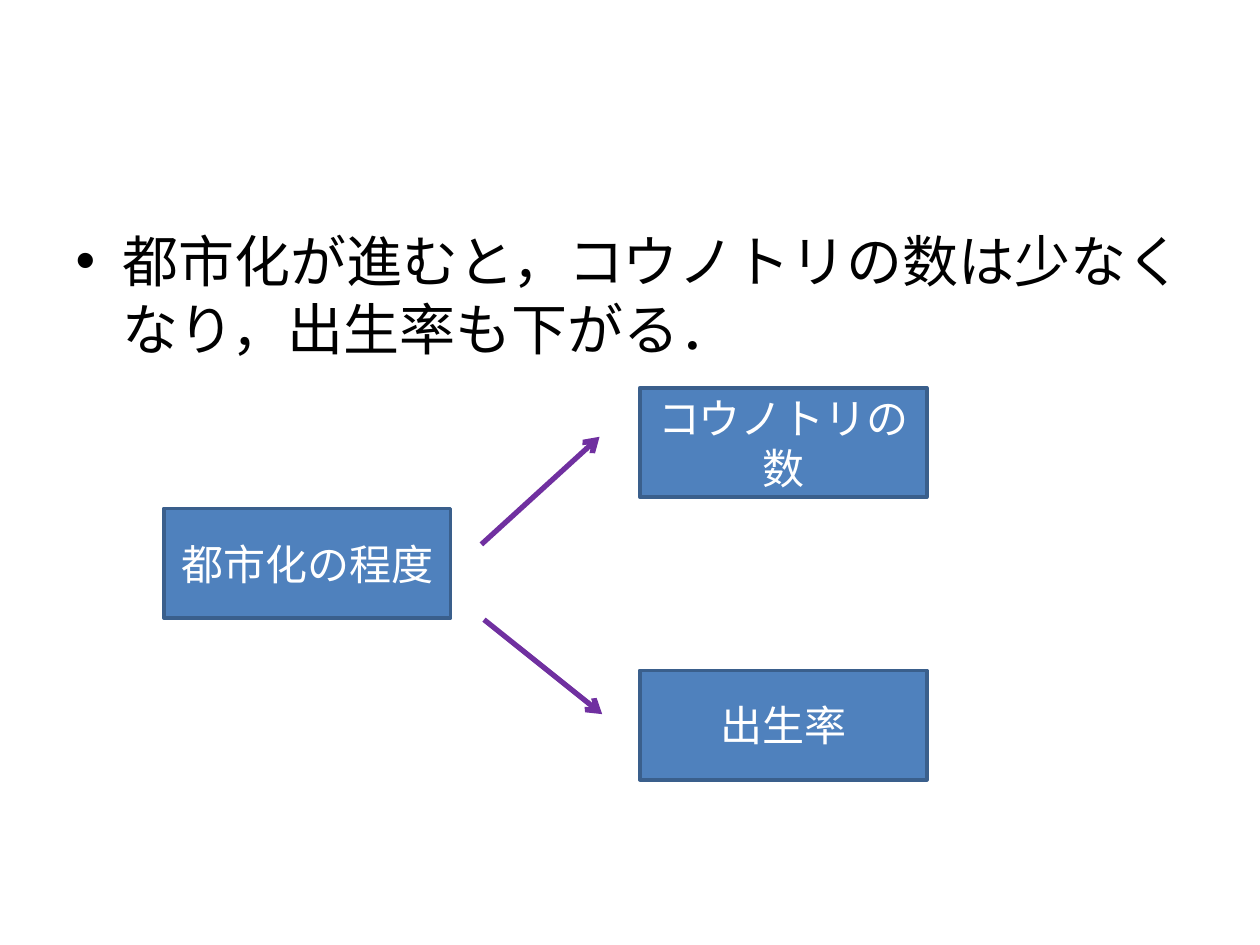
from lxml.etree import SubElement
from pptx import Presentation
from pptx.dml.color import RGBColor
from pptx.enum.shapes import MSO_CONNECTOR as Connector, MSO_SHAPE as Shape
from pptx.enum.text import MSO_ANCHOR as Anchor, PP_ALIGN as Align
from pptx.oxml.ns import qn
from pptx.util import Pt

BOX_WIDTH, BOX_HEIGHT = 164, 62.5


def color(value):
    """Turn a hex string into a colour."""
    return RGBColor.from_string(value)


def write_text(text_frame, text, size=24, fill="FFFFFF", align=None):
    """Write one formatted paragraph into a text frame."""
    text_frame.word_wrap = True
    paragraph = text_frame.paragraphs[0]
    paragraph.alignment = align
    run = paragraph.add_run()
    run.text = text
    run.font.name = "Calibri"
    run.font.size = Pt(size)
    run.font.color.rgb = color(fill)


def add_statement(slide, left, top, width, height):
    """Place the bulleted statement and drop the unused title."""
    title = slide.shapes.title.element
    title.getparent().remove(title)
    body = slide.placeholders[1]
    body.left, body.top, body.width, body.height = map(Pt, (left, top, width, height))
    write_text(body.text_frame, "都市化が進むと，コウノトリの数は少なくなり，出生率も下がる．",
               size=32, fill="000000")


def add_box(slide, text, left, top):
    """Add one labelled box of the diagram."""
    box = slide.shapes.add_shape(Shape.RECTANGLE, Pt(left), Pt(top), Pt(BOX_WIDTH), Pt(BOX_HEIGHT))
    box.shadow.inherit = False
    box.fill.solid()
    box.fill.fore_color.rgb = color("4F81BD")
    box.line.color.rgb = color("3A5F8C")
    box.line.width = Pt(2)
    box.text_frame.vertical_anchor = Anchor.MIDDLE
    write_text(box.text_frame, text, align=Align.CENTER)


def add_arrow(slide, start_x, start_y, end_x, end_y):
    """Add one purple arrow."""
    arrow = slide.shapes.add_connector(
        Connector.STRAIGHT, Pt(start_x), Pt(start_y), Pt(end_x), Pt(end_y))
    arrow.line.color.rgb = color("7030A0")
    arrow.line.width = Pt(3)
    SubElement(arrow.line._get_or_add_ln(), qn("a:tailEnd"), type="arrow")
    SubElement(arrow.element.spPr, qn("a:effectLst"))


def add_diagram(slide, left, top):
    """Place the cause, its two effects and the arrows between them."""
    effect_left = left + 272
    add_box(slide, "都市化の程度", left, top + 69)
    add_box(slide, "コウノトリの数", effect_left, top)
    add_box(slide, "出生率", effect_left, top + 161.5)
    add_arrow(slide, left + 181.5, top + 89.5, left + 249, top + 28)
    add_arrow(slide, left + 183, top + 132.5, left + 250.5, top + 186.5)


def main():
    """Build and save the presentation."""
    presentation = Presentation()
    presentation.slide_width, presentation.slide_height = Pt(720), Pt(540)
    slide = presentation.slides.add_slide(presentation.slide_layouts.get_by_name("Title and Content"))
    add_statement(slide, 36, 126, 648, 356.4)
    add_diagram(slide, 93.6, 221.6)
    presentation.save("out.pptx")


if __name__ == "__main__":
    main()
